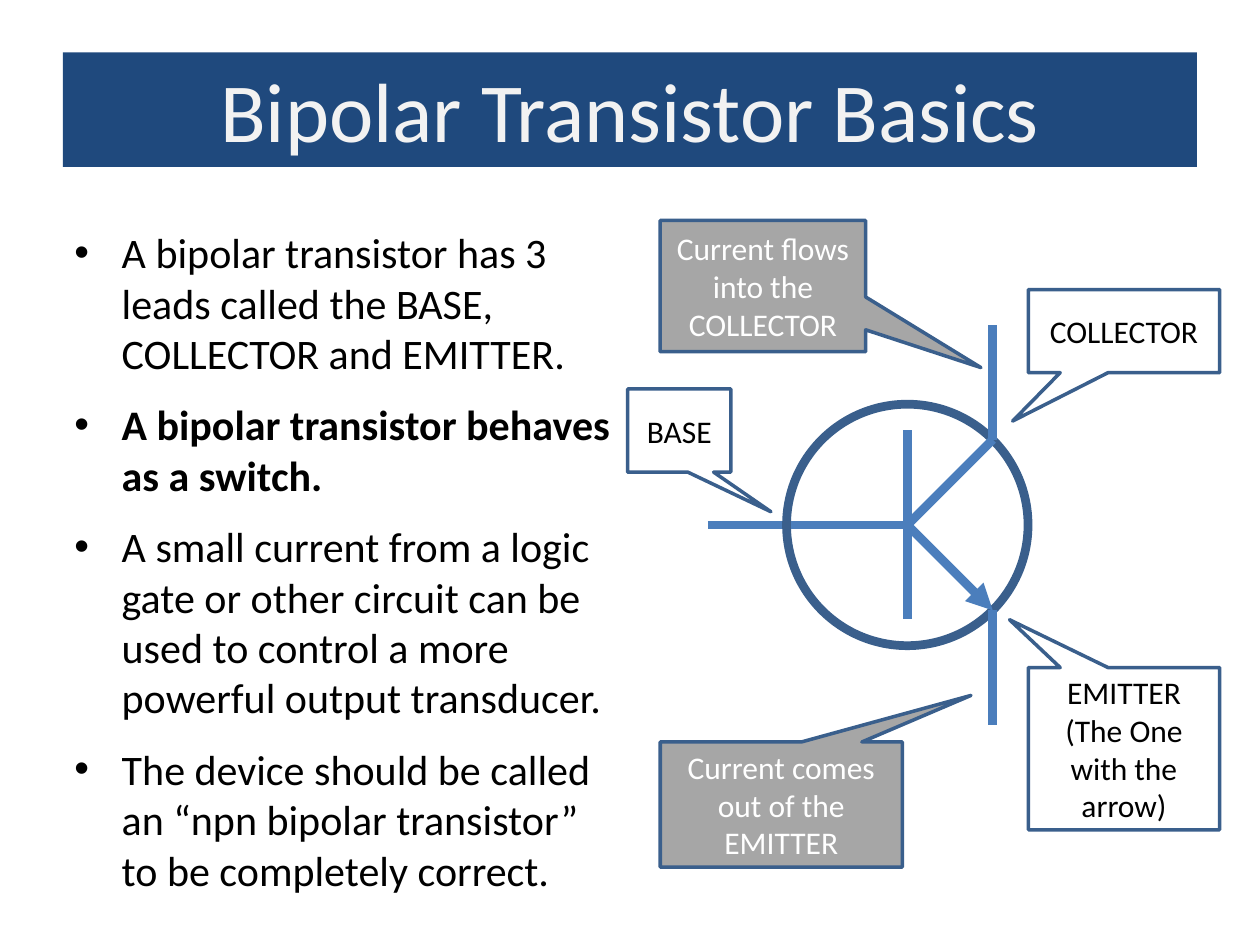
from math import sqrt

from lxml import etree
from pptx import Presentation
from pptx.dml.color import RGBColor
from pptx.enum.shapes import MSO_CONNECTOR, MSO_SHAPE
from pptx.enum.text import MSO_ANCHOR, PP_ALIGN
from pptx.oxml.ns import qn
from pptx.util import Pt

STRAIGHT = MSO_CONNECTOR.STRAIGHT
RECTANGLE = MSO_SHAPE.RECTANGLE
OVAL = MSO_SHAPE.OVAL
CALLOUT = MSO_SHAPE.RECTANGULAR_CALLOUT
TOP, MIDDLE = MSO_ANCHOR.TOP, MSO_ANCHOR.MIDDLE
LEFT, CENTER = PP_ALIGN.LEFT, PP_ALIGN.CENTER

NAVY = RGBColor(0x1F, 0x49, 0x7D)
LEAD_BLUE = RGBColor(0x4B, 0x7E, 0xBC)
OUTLINE_BLUE = RGBColor(0x3A, 0x5F, 0x8C)
GRAY = RGBColor(0xA6, 0xA6, 0xA6)
OFF_WHITE = RGBColor(0xF2, 0xF2, 0xF2)
WHITE = RGBColor(0xFF, 0xFF, 0xFF)
BLACK = RGBColor(0, 0, 0)

FONT = "Calibri"
BULLET_INDENT = 27
SYMBOL_LINE = 5

FACTS = [
    "A bipolar transistor has 3 leads called the BASE, COLLECTOR and EMITTER.",
    "A bipolar transistor behaves as a switch.",
    "A small current from a logic gate or other circuit can be used to control "
    "a more powerful output transducer.",
    "The device should be called an “npn bipolar transistor” to be completely correct.",
]
KEY_FACT = 1

# text, (left, top, width, height), pointer offset, fill, text colour
CALLOUTS = [
    (["Current comes out of the EMITTER"], (377.3, 424, 138.3, 71.5),
     (0.784, -0.872), GRAY, WHITE),
    (["Current flows into the COLLECTOR"], (377.3, 126, 117.4, 75),
     (1.061, 0.621), GRAY, WHITE),
    (["COLLECTOR"], (587.6, 165.5, 109.4, 47.5), (-0.582, 1.082), None, BLACK),
    (["EMITTER", "(The One with the arrow)"], (587.6, 381.5, 109.4, 92.7),
     (-0.598, -0.795), None, BLACK),
    (["BASE"], (358.6, 222.3, 59, 47.5), (0.889, 0.977), None, BLACK),
]


def write_text(frame, paragraphs, size, color, align=LEFT, anchor=MIDDLE,
               space_after=0, bullet=False, bold_index=None):
    frame.word_wrap = True
    frame.vertical_anchor = anchor
    for index, wording in enumerate(paragraphs):
        paragraph = frame.paragraphs[0] if index == 0 else frame.add_paragraph()
        paragraph.alignment = align
        paragraph.space_after = Pt(space_after)
        run = paragraph.add_run()
        run.text = wording
        run.font.name = FONT
        run.font.size = Pt(size)
        run.font.bold = index == bold_index
        run.font.color.rgb = color
        if bullet:
            add_bullet(paragraph)


def add_bullet(paragraph):
    properties = paragraph._p.get_or_add_pPr()
    properties.set("marL", str(Pt(BULLET_INDENT)))
    properties.set("indent", str(-Pt(BULLET_INDENT)))
    etree.SubElement(properties, qn("a:buFont"), typeface="Arial")
    etree.SubElement(properties, qn("a:buChar"), char="•")


def add_outline_shape(slide, kind, bounds, fill=None, line=None, line_width=2):
    shape = slide.shapes.add_shape(kind, *map(Pt, bounds))
    shape.shadow.inherit = False
    if fill is None:
        shape.fill.background()
    else:
        shape.fill.solid()
        shape.fill.fore_color.rgb = fill
    if line is None:
        shape.line.fill.background()
    else:
        shape.line.color.rgb = line
        shape.line.width = Pt(line_width)
    return shape


def add_lead(slide, start, end, arrow=False):
    lead = slide.shapes.add_connector(STRAIGHT, *map(Pt, (*start, *end)))
    lead.line.color.rgb = LEAD_BLUE
    lead.line.width = Pt(SYMBOL_LINE)
    if arrow:
        etree.SubElement(lead.line._get_or_add_ln(), qn("a:tailEnd"), type="triangle")
    etree.SubElement(lead._element.spPr, qn("a:effectLst"))


def add_transistor(slide, x, y, radius):
    """Draw the npn symbol centred on x, y, its outer leads on the circle at 45°."""
    reach = round(radius / sqrt(2), 2)
    lead_length = 65.5
    lead_x = x + reach
    collector, emitter = (lead_x, y - reach), (lead_x, y + reach)

    add_lead(slide, (x, y - 54), (x, y + 54))
    add_lead(slide, (x - 114, y), (x, y))
    add_outline_shape(slide, OVAL, (x - radius, y - radius, 2 * radius, 2 * radius),
                      line=OUTLINE_BLUE, line_width=SYMBOL_LINE)
    add_lead(slide, (x, y), collector)
    add_lead(slide, (x, y), emitter, arrow=True)
    add_lead(slide, collector, (lead_x, collector[1] - lead_length))
    add_lead(slide, emitter, (lead_x, emitter[1] + lead_length))


def add_callout(slide, paragraphs, bounds, pointer, fill, color):
    callout = add_outline_shape(slide, CALLOUT, bounds, fill, OUTLINE_BLUE)
    for index, offset in enumerate(pointer):
        callout.adjustments[index] = offset
    write_text(callout.text_frame, paragraphs, 18, color, align=CENTER)


def main():
    presentation = Presentation()
    presentation.slide_width, presentation.slide_height = Pt(720), Pt(540)
    slide = presentation.slides.add_slide(presentation.slide_layouts[6])

    facts = slide.shapes.add_textbox(*map(Pt, (35.5, 126, 324.5, 396)))
    write_text(facts.text_frame, FACTS, 24, BLACK, anchor=TOP, space_after=12,
               bullet=True, bold_index=KEY_FACT)

    add_transistor(slide, 518.5, 300, 69)
    for callout in CALLOUTS:
        add_callout(slide, *callout)

    title = add_outline_shape(slide, RECTANGLE, (36, 30, 648, 65.4), fill=NAVY)
    write_text(title.text_frame, ["Bipolar Transistor Basics"], 48, OFF_WHITE,
               align=CENTER, anchor=TOP)

    presentation.save("out.pptx")


if __name__ == "__main__":
    main()
